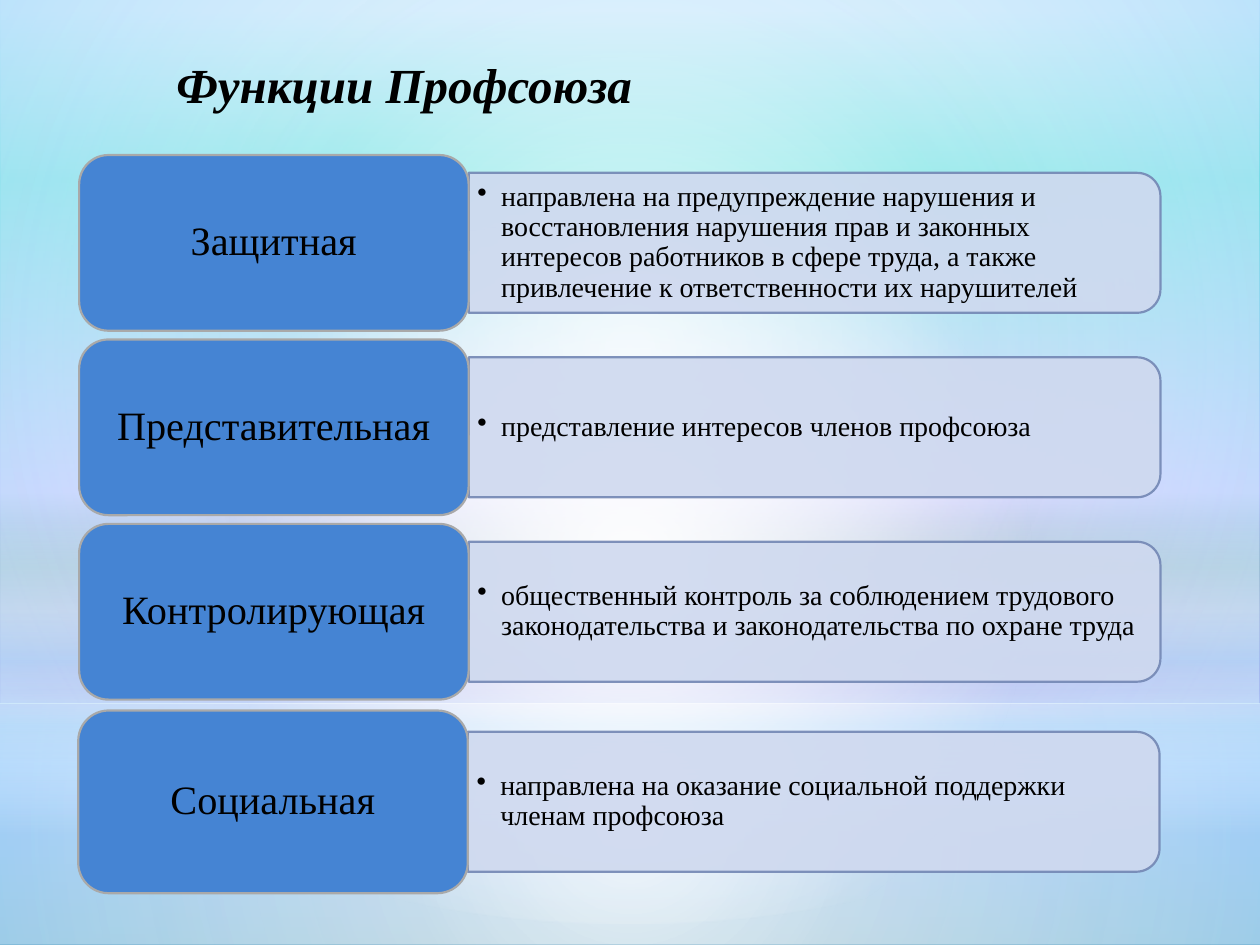
from dataclasses import dataclass
from typing import Optional

from lxml import etree
from pptx import Presentation
from pptx.dml.color import RGBColor
from pptx.enum.shapes import MSO_SHAPE
from pptx.enum.text import MSO_ANCHOR, MSO_AUTO_SIZE, PP_ALIGN
from pptx.oxml.ns import qn
from pptx.util import Pt

RECTANGLE, OVAL = MSO_SHAPE.RECTANGLE, MSO_SHAPE.OVAL
ROUNDED, TAB = MSO_SHAPE.ROUNDED_RECTANGLE, MSO_SHAPE.ROUND_2_SAME_RECTANGLE
TOP, MIDDLE = MSO_ANCHOR.TOP, MSO_ANCHOR.MIDDLE
LEFT, CENTER = PP_ALIGN.LEFT, PP_ALIGN.CENTER
GROW = MSO_AUTO_SIZE.SHAPE_TO_FIT_TEXT


@dataclass(frozen=True)
class Theme:
    font: str = "Times New Roman"
    text: str = "000000"
    label_fill: str = "4584D3"
    label_line: str = "A9A9A9"
    panel_fill: str = "CFD9EF"
    panel_line: str = "7387B4"
    panel_opacity: int = 90
    line_width: float = 1.25
    title_size: int = 28
    label_size: int = 23
    panel_size: int = 16


@dataclass(frozen=True)
class Stop:
    position: int
    color: str
    opacity: int = 100


@dataclass(frozen=True)
class Wash:
    kind: int
    top: float
    height: float
    stops: tuple
    angle: Optional[int] = None


@dataclass(frozen=True)
class Function:
    label: str
    meaning: str
    middle: float
    left: float = 45.2
    label_height: float = 100.4


THEME = Theme()
SLIDE_WIDTH, SLIDE_HEIGHT = 720, 540
LABEL_WIDTH, PANEL_WIDTH, PANEL_HEIGHT = 222.6, 395.3, 80
BULLET_INDENT = 13.6
FIRST_MIDDLE, PITCH = 138.8, 105.4

BACKGROUND = (Stop(1, "9BD5FA"), Stop(19, "00CCCC"), Stop(52, "9D9DFF"), Stop(60, "2E6792"),
              Stop(71, "3333CC"), Stop(81, "1170FF"), Stop(100, "006699"))
WASHES = (
    Wash(RECTANGLE, 401.8, 138.2,
         (Stop(0, "FFFFFF", 91), Stop(37, "FFFFFF", 76), Stop(100, "C6E7FC", 79))),
    Wash(RECTANGLE, 0, 401.8,
         (Stop(0, "FFFFFF", 89), Stop(48, "FFFFFF", 62), Stop(100, "C6E7FC", 79))),
    Wash(RECTANGLE, 296.6, 180,
         (Stop(0, "FFFFFF", 0), Stop(29, "FFFFFF", 30), Stop(45, "C6E7FC", 40),
          Stop(55, "FFFFFF", 26), Stop(65, "C6E7FC", 60), Stop(100, "FFFFFF", 0)), 90),
    Wash(OVAL, 126, 401.8, (Stop(0, "FFFFFF"), Stop(56, "FFFFFF", 0))),
)
FUNCTIONS = (
    Function("Защитная",
             "направлена на предупреждение нарушения и восстановления нарушения прав и законных "
             "интересов работников в сфере труда, а также привлечение к ответственности их "
             "нарушителей", FIRST_MIDDLE),
    Function("Представительная", "представление интересов членов профсоюза",
             FIRST_MIDDLE + PITCH),
    Function("Контролирующая",
             "общественный контроль за соблюдением трудового законодательства и "
             "законодательства по охране труда", FIRST_MIDDLE + 2 * PITCH),
    Function("Социальная", "направлена на оказание социальной поддержки членам профсоюза",
             458.2, 44.7, 104.4),
)


def set_opacity(color, percent: int) -> None:
    etree.SubElement(color, qn("a:alpha"), val=str(percent * 1000))


def set_gradient(fill, owner, stops: tuple, angle: Optional[int] = None) -> None:
    fill.gradient()
    gradient = owner.find(".//" + qn("a:gradFill"))
    for child in list(gradient):
        gradient.remove(child)
    stop_list = etree.SubElement(gradient, qn("a:gsLst"))
    for stop in stops:
        entry = etree.SubElement(stop_list, qn("a:gs"), pos=str(stop.position * 1000))
        color = etree.SubElement(entry, qn("a:srgbClr"), val=stop.color)
        if stop.opacity < 100:
            set_opacity(color, stop.opacity)
    if angle is None:
        circle = etree.SubElement(gradient, qn("a:path"), {"path": "circle"})
        etree.SubElement(circle, qn("a:fillToRect"), dict.fromkeys("ltrb", "50000"))
    else:
        etree.SubElement(gradient, qn("a:lin"), ang=str(angle * 60000), scaled="0")


def add_box(slide, kind: int, left: float, top: float, width: float, height: float):
    box = slide.shapes.add_shape(kind, Pt(left), Pt(top), Pt(width), Pt(height))
    box.shadow.inherit = False
    return box


def paint(box, fill: str, line: str, opacity: int = 100) -> None:
    box.fill.solid()
    box.fill.fore_color.rgb = RGBColor.from_string(fill)
    box.line.color.rgb = RGBColor.from_string(line)
    box.line.width = Pt(THEME.line_width)
    if opacity < 100:
        for color in box.element.spPr.iter(qn("a:srgbClr")):
            set_opacity(color, opacity)


def write(frame, text: str, size: int, align: int, anchor: int, insets: tuple):
    frame.word_wrap = True
    frame.vertical_anchor = anchor
    frame.margin_left, frame.margin_top, frame.margin_right, frame.margin_bottom = map(Pt, insets)
    paragraph = frame.paragraphs[0]
    paragraph.alignment = align
    run = paragraph.add_run()
    run.text = text
    run.font.name = THEME.font
    run.font.size = Pt(size)
    run.font.color.rgb = RGBColor.from_string(THEME.text)
    return paragraph


def add_bullet(paragraph) -> None:
    paragraph.level = 1
    properties = paragraph._p.get_or_add_pPr()
    properties.set("marL", str(Pt(BULLET_INDENT)))
    properties.set("indent", str(-Pt(BULLET_INDENT)))
    etree.SubElement(properties, qn("a:buChar"), char="•")


def draw_wash(slide, wash: Wash) -> None:
    box = add_box(slide, wash.kind, 0, wash.top, SLIDE_WIDTH, wash.height)
    set_gradient(box.fill, box.element.spPr, wash.stops, wash.angle)
    box.line.fill.background()


def draw_function(slide, function: Function) -> None:
    panel_left = function.left + LABEL_WIDTH
    panel_top = function.middle - PANEL_HEIGHT / 2
    panel = add_box(slide, TAB, panel_left + (PANEL_WIDTH - PANEL_HEIGHT) / 2,
                    function.middle - PANEL_WIDTH / 2, PANEL_HEIGHT, PANEL_WIDTH)
    panel.rotation = 90
    paint(panel, THEME.panel_fill, THEME.panel_line, THEME.panel_opacity)

    meaning = slide.shapes.add_textbox(Pt(panel_left), Pt(panel_top),
                                       Pt(PANEL_WIDTH), Pt(PANEL_HEIGHT))
    bullet = write(meaning.text_frame, function.meaning, THEME.panel_size, LEFT, MIDDLE,
                   (5, 2, 8.6, 2))
    bullet.line_spacing = 0.9
    add_bullet(bullet)

    label = add_box(slide, ROUNDED, function.left, function.middle - function.label_height / 2,
                    LABEL_WIDTH, function.label_height)
    paint(label, THEME.label_fill, THEME.label_line)
    caption = write(label.text_frame, function.label, THEME.label_size, CENTER, MIDDLE,
                    (7.2, 3.6, 7.2, 3.6))
    caption.line_spacing = 0.9


def draw_title(slide, text: str) -> None:
    title = slide.shapes.title
    title.left, title.top, title.width, title.height = Pt(93.6), Pt(27.4), Pt(408.2), Pt(41)
    heading = write(title.text_frame, text, THEME.title_size, LEFT, TOP, (7.2, 3.6, 7.2, 3.6))
    title.text_frame.auto_size = GROW
    heading.runs[0].font.bold = heading.runs[0].font.italic = True
    title.element.getparent().append(title.element)


def main() -> None:
    """Build the slide on the functions of a trade union."""
    deck = Presentation()
    deck.slide_width, deck.slide_height = Pt(SLIDE_WIDTH), Pt(SLIDE_HEIGHT)
    slide = deck.slides.add_slide(deck.slide_layouts[5])
    set_gradient(slide.background.fill, slide.element, BACKGROUND, 90)
    for wash in WASHES:
        draw_wash(slide, wash)
    draw_title(slide, "Функции Профсоюза")
    for function in FUNCTIONS:
        draw_function(slide, function)
    deck.save("out.pptx")


if __name__ == "__main__":
    main()
